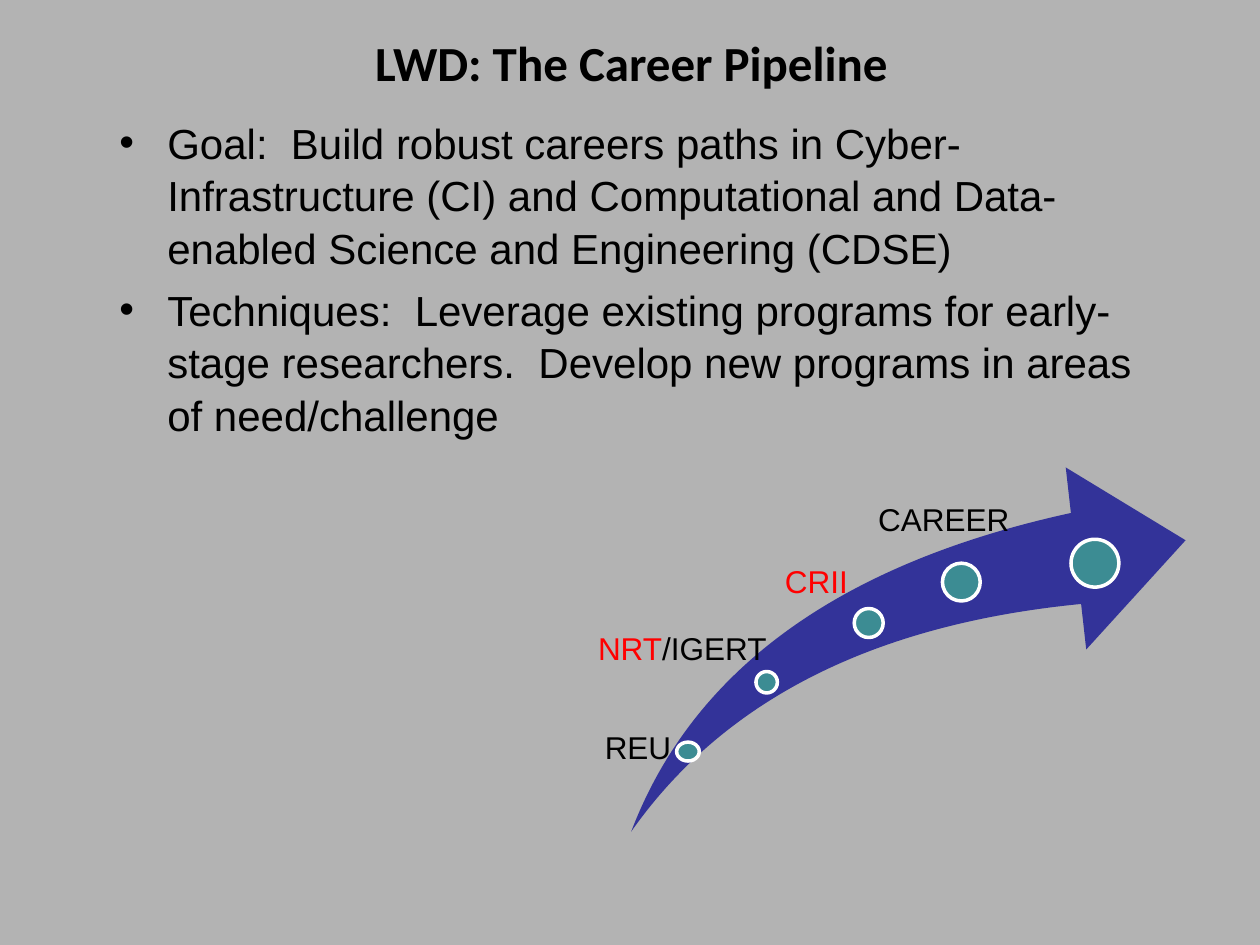
from dataclasses import dataclass
from typing import NamedTuple

from lxml.etree import SubElement
from pptx import Presentation
from pptx.dml.color import RGBColor
from pptx.enum.shapes import MSO_SHAPE as Shape
from pptx.enum.text import MSO_ANCHOR as Anchor, PP_ALIGN as Align
from pptx.oxml.ns import qn
from pptx.util import Inches, Pt


@dataclass(frozen=True)
class Theme:
    background: str = "B3B3B3"
    text: str = "000000"
    highlight: str = "FF0000"
    arrow: str = "333399"
    dot: str = "3C8C93"
    outline: str = "FFFFFF"
    title_font: str = "Calibri"
    body_font: str = "Arial"
    title_size: int = 28
    body_size: int = 24
    label_size: int = 18


class Box(NamedTuple):
    """A place on a grid of 100 columns by 75 rows."""
    column: float
    row: float
    columns: float
    rows: float

    def lengths(self) -> list:
        return [Inches(cells * CELL) for cells in self]


class Stage(NamedTuple):
    """A programme on the pipeline: its dot and its label's highlighted and plain parts."""
    dot: Box
    label: Box
    highlighted: str = ""
    plain: str = ""


THEME = Theme()
CELL = 0.1
TITLE_BOX = Box(8, 2.1, 84.2, 12.5)
BODY_BOX = Box(8.5, 8.6, 83.3, 58.5)
ARROW_BOX = Box(50.1, 37.1, 44, 28.9)
GOALS = [
    "Goal:  Build robust careers paths in Cyber-Infrastructure (CI) and "
    "Computational and Data-enabled Science and Engineering (CDSE)",
    "Techniques:  Leverage existing programs for early-stage researchers.  "
    "Develop new programs in areas of need/challenge",
]
STAGES = [
    Stage(Box(53.7, 58.9, 1.8, 1.5), Box(48, 57.8, 5.7, 3), plain="REU"),
    Stage(Box(60, 53.3, 1.7, 1.7), Box(47.4, 49.9, 13.5, 3), "NRT", "/IGERT"),
    Stage(Box(67.8, 48.3, 2.3, 2.3), Box(62.3, 44.6, 6, 3), "CRII"),
    Stage(Box(74.8, 44.7, 3, 3), Box(69.7, 39.7, 11.6, 3), plain="CAREER"),
]
FINAL_DOT = Box(85, 42.8, 3.8, 3.8)


def color(value: str) -> RGBColor:
    return RGBColor.from_string(value)


def style_font(font, name: str, size: int, value: str, bold: bool = False) -> None:
    font.name, font.size, font.bold = name, Pt(size), bold
    font.color.rgb = color(value)


def add_title(slide, text: str) -> None:
    title = slide.shapes.title
    title.left, title.top, title.width, title.height = TITLE_BOX.lengths()
    frame = title.text_frame
    frame.text = text
    frame.vertical_anchor = Anchor.TOP
    paragraph = frame.paragraphs[0]
    paragraph.alignment = Align.CENTER
    style_font(paragraph.runs[0].font, THEME.title_font, THEME.title_size, THEME.text, True)


def add_bullets(slide, items: list) -> None:
    frame = slide.shapes.add_textbox(*BODY_BOX.lengths()).text_frame
    frame.word_wrap = True
    frame.text = "\n".join(items)
    for index, paragraph in enumerate(frame.paragraphs):
        properties = paragraph._p.get_or_add_pPr()
        properties.set("marL", str(Inches(0.38)))
        properties.set("indent", str(-Inches(0.38)))
        SubElement(properties, qn("a:buFont"), typeface=THEME.body_font)
        SubElement(properties, qn("a:buChar"), char="•")
        paragraph.line_spacing = 1.05
        paragraph.space_before = Pt(0.2 * THEME.body_size if index else 0)
        style_font(paragraph.runs[0].font, THEME.body_font, THEME.body_size, THEME.text)


def add_filled(slide, kind: Shape, box: Box, fill: str):
    shape = slide.shapes.add_shape(kind, *box.lengths())
    shape.shadow.inherit = False
    shape.fill.solid()
    shape.fill.fore_color.rgb = color(fill)
    shape.line.fill.background()
    return shape


def add_dot(slide, box: Box) -> None:
    dot = add_filled(slide, Shape.OVAL, box, THEME.dot)
    dot.line.color.rgb = color(THEME.outline)
    dot.line.width = Pt(2)


def add_label(slide, stage: Stage) -> None:
    frame = slide.shapes.add_textbox(*stage.label.lengths()).text_frame
    frame.margin_left = frame.margin_right = frame.margin_top = frame.margin_bottom = 0
    frame.word_wrap = True
    frame.vertical_anchor = Anchor.MIDDLE
    paragraph = frame.paragraphs[0]
    paragraph.alignment = Align.CENTER if stage.highlighted and stage.plain else Align.LEFT
    for text, value in ((stage.highlighted, THEME.highlight), (stage.plain, THEME.text)):
        if text:
            run = paragraph.add_run()
            run.text = text
            style_font(run.font, THEME.body_font, THEME.label_size, value)


def main() -> None:
    presentation = Presentation()
    presentation.slide_width, presentation.slide_height = Inches(10), Inches(7.5)
    slide = presentation.slides.add_slide(presentation.slide_layouts.get_by_name("Title Only"))
    slide.background.fill.solid()
    slide.background.fill.fore_color.rgb = color(THEME.background)

    # Heading and goals
    add_title(slide, "LWD: The Career Pipeline")
    add_bullets(slide, GOALS)

    # Career pipeline
    arrow = add_filled(slide, Shape.SWOOSH_ARROW, ARROW_BOX, THEME.arrow)
    arrow.adjustments[0], arrow.adjustments[1] = 0.25, 0.315
    for stage in STAGES:
        add_dot(slide, stage.dot)
        add_label(slide, stage)
    add_dot(slide, FINAL_DOT)

    presentation.save("out.pptx")


if __name__ == "__main__":
    main()
